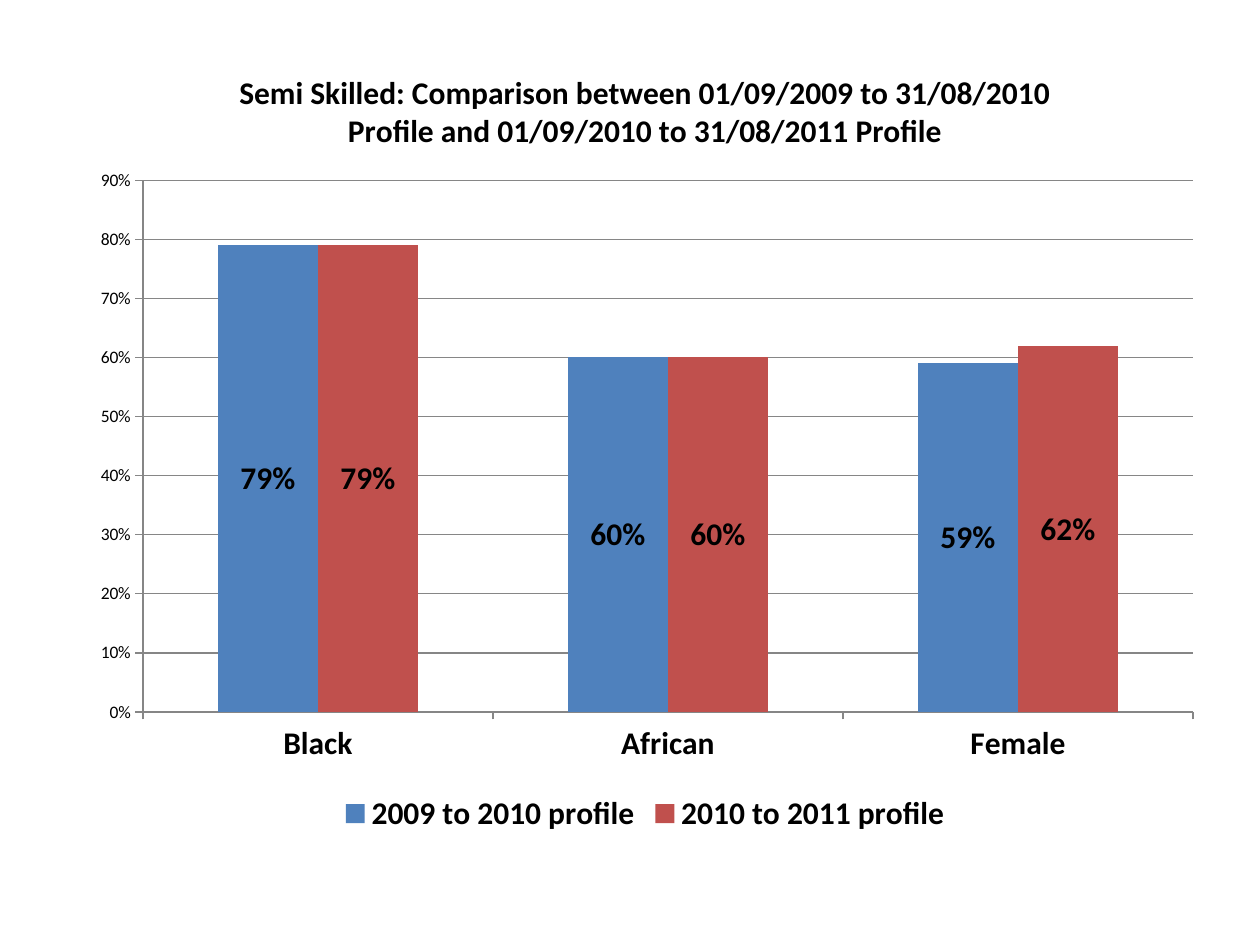
from lxml import etree
from pptx import Presentation
from pptx.chart.data import CategoryChartData
from pptx.dml.color import RGBColor
from pptx.enum.chart import XL_CHART_TYPE, XL_LABEL_POSITION, XL_LEGEND_POSITION, XL_TICK_MARK
from pptx.oxml.ns import qn
from pptx.util import Inches, Pt

CLUSTERED = XL_CHART_TYPE.COLUMN_CLUSTERED
CENTER = XL_LABEL_POSITION.CENTER
BOTTOM = XL_LEGEND_POSITION.BOTTOM
OUTSIDE = XL_TICK_MARK.OUTSIDE

BLACK = RGBColor(0x00, 0x00, 0x00)
GRAY = RGBColor(0x86, 0x86, 0x86)
BLUE = RGBColor(0x4F, 0x81, 0xBD)
RED = RGBColor(0xC0, 0x50, 0x4D)

PERCENT = "0%"
SMALL = {"name": "Calibri", "size": Pt(10), "bold": False}
LARGE = {"name": "Calibri", "size": Pt(18), "bold": True}
TITLE_LINES = [
    "Semi Skilled: Comparison between 01/09/2009 to 31/08/2010",
    "Profile and 01/09/2010 to 31/08/2011 Profile",
]
CATEGORIES = ["Black", "African", "Female"]
PROFILES = [
    ("2009 to 2010 profile", (0.79, 0.6, 0.59), BLUE),
    ("2010 to 2011 profile", (0.79, 0.6, 0.62), RED),
]
PLOT_LAYOUT = {
    "layoutTarget": "inner", "xMode": "edge", "yMode": "edge",
    "x": 0.06, "y": 0.17, "w": 0.92, "h": 0.67,
}


def format_font(font, values):
    """Apply a dict of format values and the black text colour to a font."""
    for name, value in values.items():
        setattr(font, name, value)
    font.color.rgb = BLACK


def add_profile_chart(slide):
    """Add the clustered column chart and return it."""
    data = CategoryChartData(number_format=PERCENT)
    data.categories = CATEGORIES
    for name, values, _ in PROFILES:
        data.add_series(name, values)
    frame = slide.shapes.add_chart(
        CLUSTERED, Inches(0.59), Inches(0.36), Inches(9.06), Inches(6.3), data)
    format_font(frame.chart.font, SMALL)
    return frame.chart


def format_title(chart):
    """Write the chart title, one paragraph for each line."""
    text_frame = chart.chart_title.text_frame
    for index, line in enumerate(TITLE_LINES):
        para = text_frame.add_paragraph() if index else text_frame.paragraphs[0]
        span = para.add_run()
        span.text = line
        format_font(span.font, LARGE)


def format_axes(chart):
    """Set the scale, ticks, lines and fonts of both axes."""
    for axis, values in ((chart.category_axis, LARGE), (chart.value_axis, SMALL)):
        axis.major_tick_mark = OUTSIDE
        axis.format.line.color.rgb = GRAY
        format_font(axis.tick_labels.font, values)
    scale = chart.value_axis
    scale.minimum_scale, scale.maximum_scale, scale.major_unit = 0, 0.9, 0.1
    scale.tick_labels.number_format = PERCENT
    scale.tick_labels.number_format_is_linked = False
    scale.major_gridlines.format.line.color.rgb = GRAY


def format_columns(chart):
    """Colour the columns and show their values."""
    plot = chart.plots[0]
    plot.vary_by_categories = False
    plot.gap_width = 150
    plot.overlap = 0
    for series, (_, _, color) in zip(plot.series, PROFILES):
        series.format.fill.solid()
        series.format.fill.fore_color.rgb = color
        labels = series.data_labels
        labels.show_value = True
        labels.number_format = PERCENT
        labels.number_format_is_linked = False
        labels.position = CENTER
        format_font(labels.font, LARGE)


def format_legend(chart):
    """Place the legend below the plot."""
    chart.has_legend = True
    chart.legend.position = BOTTOM
    chart.legend.include_in_layout = False
    format_font(chart.legend.font, LARGE)


def place_plot(chart):
    """Fix the inner plot area as fractions of the chart."""
    area = chart.element.find(".//" + qn("c:plotArea"))
    for old_layout in area.findall(qn("c:layout")):
        area.remove(old_layout)
    layout = etree.Element(qn("c:layout"))
    manual = etree.SubElement(layout, qn("c:manualLayout"))
    for name, value in PLOT_LAYOUT.items():
        etree.SubElement(manual, qn("c:" + name)).set("val", str(value))
    area.insert(0, layout)


def main():
    """Build and save the slide."""
    deck = Presentation()
    deck.slide_width, deck.slide_height = Inches(10), Inches(7.5)
    page = deck.slides.add_slide(deck.slide_layouts[6])
    chart = add_profile_chart(page)
    format_title(chart)
    format_axes(chart)
    format_columns(chart)
    format_legend(chart)
    place_plot(chart)
    deck.save("out.pptx")


if __name__ == "__main__":
    main()
